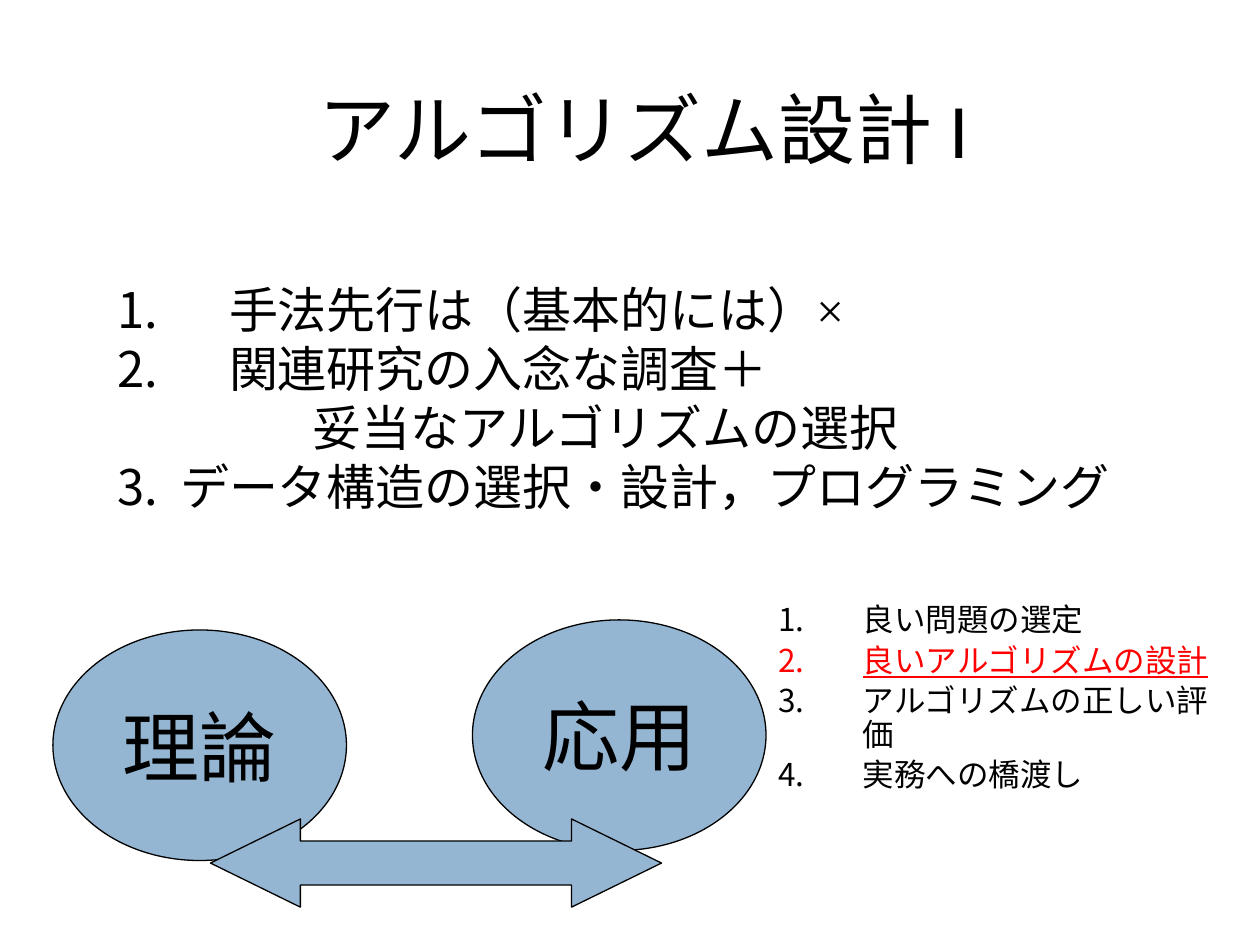
import pptx
import pptx.util
import pptx.dml.color
import pptx.enum.shapes
import pptx.enum.text
import lxml.etree

Inch = pptx.util.Inches
Pt = pptx.util.Pt
Shape = pptx.enum.shapes.MSO_SHAPE
Align = pptx.enum.text.PP_ALIGN
Anchor = pptx.enum.text.MSO_ANCHOR
Fit = pptx.enum.text.MSO_AUTO_SIZE

# Content: list rows are (number or None, text)
TITLE = "アルゴリズム設計 I"
POINTS = [
    (1, "　手法先行は（基本的には）×"),
    (2, "　関連研究の入念な調査＋"),
    (None, "妥当なアルゴリズムの選択"),
    (3, "データ構造の選択・設計，プログラミング"),
]
STEPS = [
    (1, "良い問題の選定"),
    (2, "良いアルゴリズムの設計"),
    (3, "アルゴリズムの正しい評価"),
    (4, "実務への橋渡し"),
]
NOW = 2
FIELDS = [("理論", 0.42, 5), ("応用", 3.75, 4.92)]
SERIF = "Times New Roman"
BLUE, BLACK, RED = "94B6D2", "000000", "FF0000"


def color(code):
    return pptx.dml.color.RGBColor.from_string(code)


def write(para, text, size=28, face=SERIF, ink=BLACK, align=None, under=None):
    para.text = text
    font = para.font
    font.size, font.name, font.underline = Pt(size), face, under
    font.color.rgb = color(ink)
    para.alignment = align


def mark(para, num, left, hang):
    """Number a paragraph, or indent it without a bullet."""
    props = para._p.get_or_add_pPr()
    props.set("marL", str(Inch(left)))
    props.set("indent", str(-Inch(hang)))
    space = pptx.oxml.ns.qn
    if num is None:
        lxml.etree.SubElement(props, space("a:buNone"))
    else:
        lxml.etree.SubElement(props, space("a:buFont"), typeface="+mj-lt")
        lxml.etree.SubElement(props, space("a:buAutoNum"),
                              type="arabicPeriod", startAt=str(num))


def place(shape, left, top, width, height):
    shape.left, shape.top = Inch(left), Inch(top)
    shape.width, shape.height = Inch(width), Inch(height)


def rows(frame, items):
    """Yield each item with its paragraph."""
    for i, item in enumerate(items):
        yield i, item, frame.add_paragraph() if i else frame.paragraphs[0]


def draw(slide, kind, *box):
    shape = slide.shapes.add_shape(kind, *map(Inch, box))
    shape.shadow.inherit = False
    shape.fill.solid()
    shape.fill.fore_color.rgb = color(BLUE)
    shape.line.color.rgb = color(BLACK)
    shape.line.width = Pt(0.75)
    return shape


def main():
    deck = pptx.Presentation()
    deck.slide_width, deck.slide_height = Inch(10), Inch(7.5)
    slide = deck.slides.add_slide(deck.slide_layouts[1])

    # Title
    title = slide.shapes.title
    place(title, 0.86, 0.39, 8.5, 1.25)
    title.text_frame.vertical_anchor = Anchor.MIDDLE
    write(title.text_frame.paragraphs[0], TITLE, size=44, face="Calibri",
          align=Align.CENTER)

    # Main list
    body = slide.placeholders[1]
    place(body, 0.83, 2.17, 8.25, 1.97)
    body.text_frame.auto_size = Fit.NONE
    for i, (num, text), para in rows(body.text_frame, POINTS):
        para.space_before = Pt(0)
        mark(para, num, *((0.5, 0.5) if num else (1.55, 0)))
        write(para, text)

    # Two fields and the arrow between them
    for name, left, top in FIELDS:
        oval = draw(slide, Shape.OVAL, left, top, 2.33, 1.83)
        frame = oval.text_frame
        frame.word_wrap = False
        frame.vertical_anchor = Anchor.MIDDLE
        write(frame.paragraphs[0], name, size=44, align=Align.CENTER)
    arrow = draw(slide, Shape.LEFT_RIGHT_ARROW, 1.67, 6.5, 3.58, 0.7)
    arrow.adjustments[1] = 1.02

    # Steps, with the present one in red
    box = slide.shapes.add_textbox(*map(Inch, (6.08, 4.75, 3.75, 1)))
    box.text_frame.word_wrap = True
    for i, (num, text), para in rows(box.text_frame, STEPS):
        para.line_spacing = 0.9
        para.space_before = Pt(3.6 if i else 0)
        mark(para, num, 0.67, 0.67)
        here = num == NOW
        write(para, text, size=18, face="Arial Narrow",
              ink=RED if here else BLACK, under=here)

    deck.save("out.pptx")


if __name__ == "__main__":
    main()
